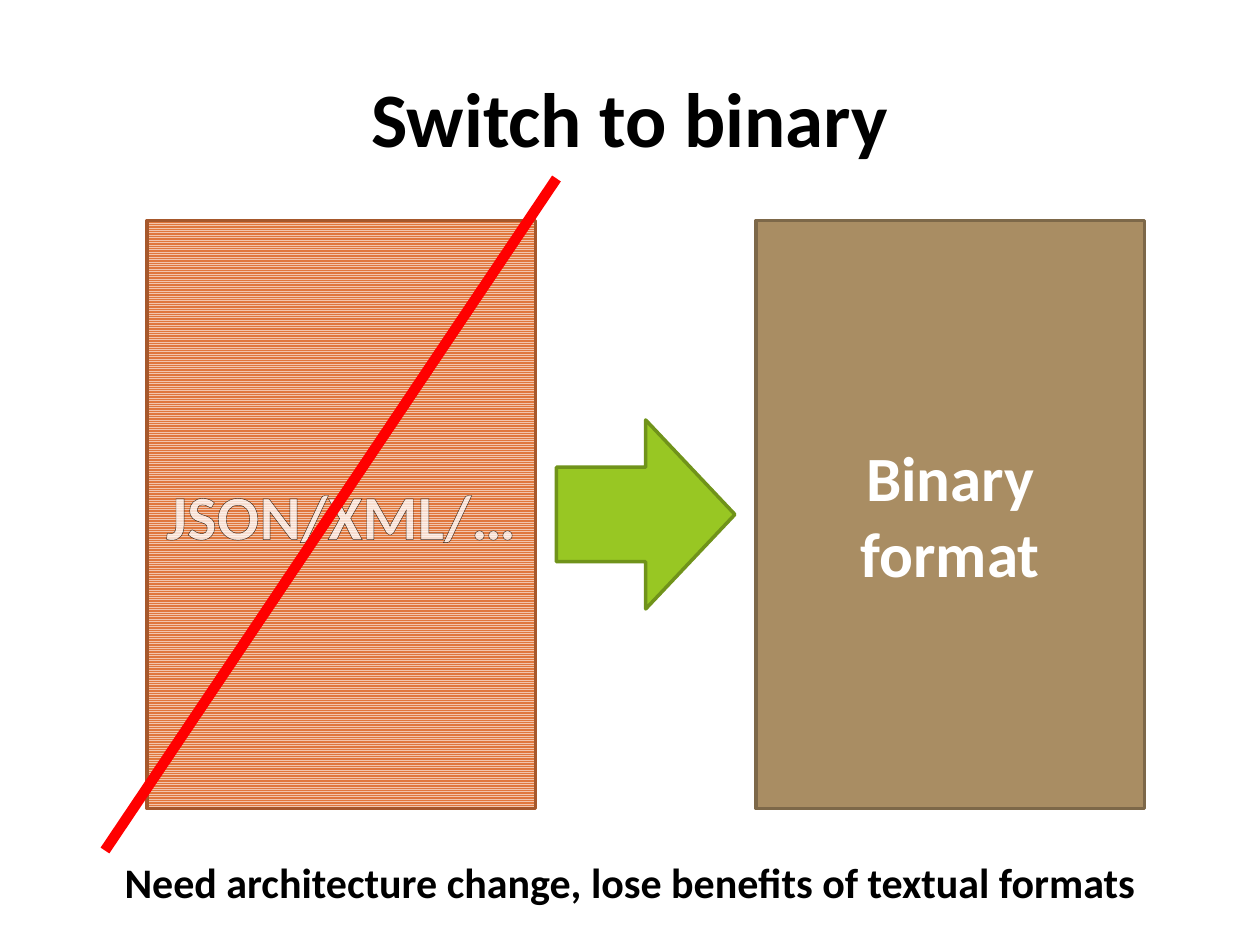
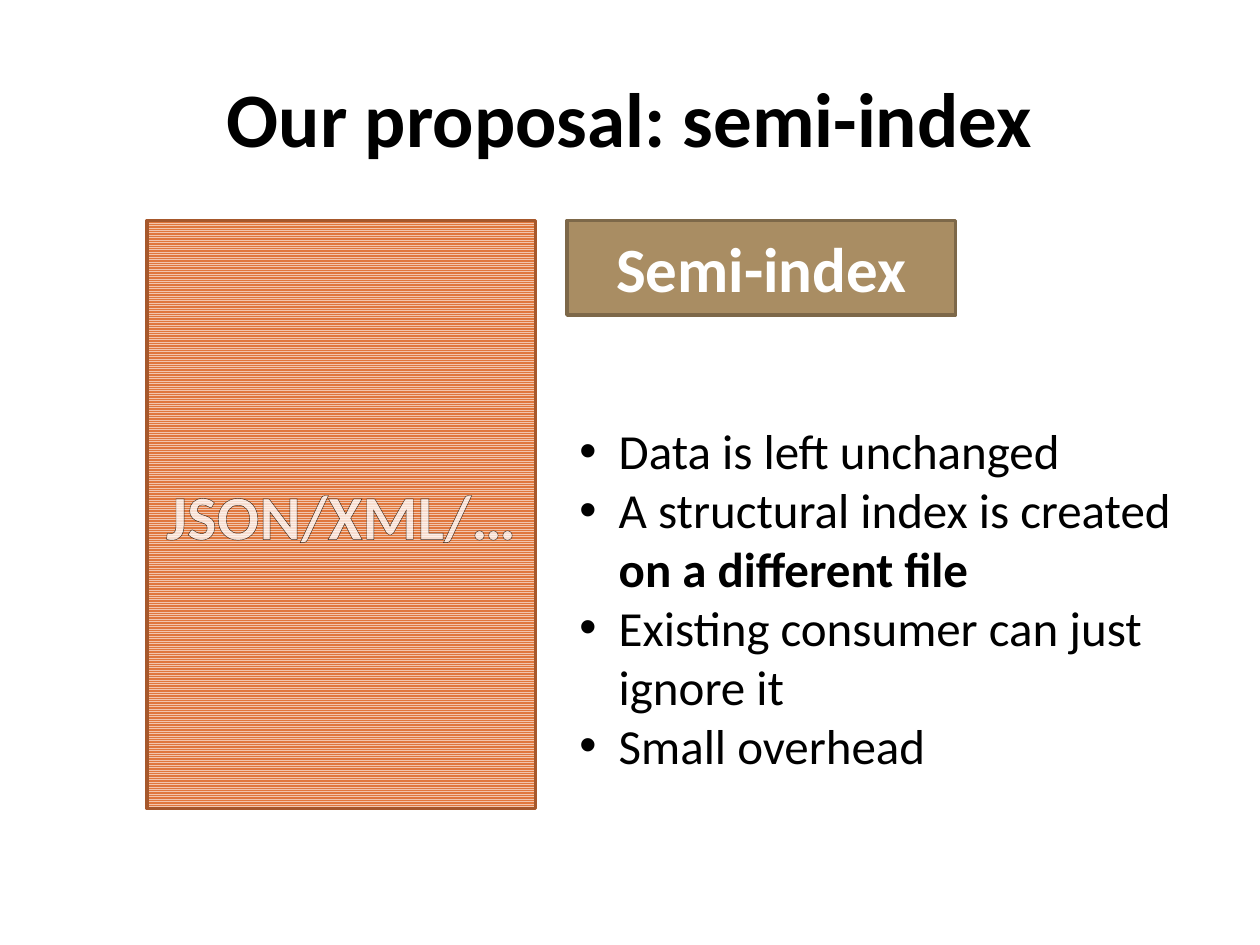
from lxml import etree
from pptx import Presentation
from pptx.dml.color import RGBColor
from pptx.enum.dml import MSO_PATTERN
from pptx.enum.shapes import MSO_CONNECTOR, MSO_SHAPE
from pptx.enum.text import MSO_ANCHOR, PP_ALIGN
from pptx.oxml import parse_xml
from pptx.oxml.ns import nsdecls, qn
from pptx.util import Pt

# Shared look
FONT = "Calibri"
BLACK = RGBColor(0x00, 0x00, 0x00)
WHITE = RGBColor(0xFF, 0xFF, 0xFF)
RED = RGBColor(0xFF, 0x00, 0x00)
ORANGE = RGBColor(0xE0, 0x77, 0x3C)
PALE_ORANGE = RGBColor(0xF2, 0xC5, 0xAC)
DARK_ORANGE = RGBColor(0xA6, 0x58, 0x2C)
TAN = RGBColor(0xA9, 0x8D, 0x63)
DARK_TAN = RGBColor(0x7D, 0x68, 0x49)
GREEN = RGBColor(0x98, 0xC7, 0x23)
DARK_GREEN = RGBColor(0x70, 0x93, 0x1A)

PANEL_TOP, PANEL_WIDTH, PANEL_HEIGHT = 126, 222, 336
BULLET_INDENT = 22.5
GLYPH_OUTLINE = (
    f'<a:ln {nsdecls("a")} w="9525"><a:solidFill><a:srgbClr val="000000">'
    '<a:alpha val="75000"/></a:srgbClr></a:solidFill></a:ln>'
)


def write(shape, text, size=36, color=WHITE, bold=True, align=PP_ALIGN.CENTER,
          anchor=MSO_ANCHOR.MIDDLE, bullet=None, outlined=False):
    """New line: paragraph; vertical tab: line break; ** switches bold."""
    frame = shape.text_frame
    frame.word_wrap = True
    frame.vertical_anchor = anchor
    for number, line in enumerate(text.split("\n")):
        paragraph = frame.add_paragraph() if number else frame.paragraphs[0]
        paragraph.alignment = align
        if bullet:
            props = paragraph._p.get_or_add_pPr()
            props.set("marL", str(Pt(BULLET_INDENT)))
            props.set("indent", str(-Pt(BULLET_INDENT)))
            etree.SubElement(props, qn("a:buFont")).set("typeface", "Arial")
            etree.SubElement(props, qn("a:buChar")).set("char", bullet)
        for row_number, row in enumerate(line.split("\v")):
            if row_number:
                paragraph.add_line_break()
            for part_number, part in enumerate(row.split("**")):
                if not part:
                    continue
                run = paragraph.add_run()
                run.text = part
                run.font.name = FONT
                run.font.size = Pt(size)
                run.font.bold = bold != (part_number % 2 == 1)
                run.font.color.rgb = color
                if outlined:
                    run.font._element.insert(0, parse_xml(GLYPH_OUTLINE))


def add_block(slide, kind, left, top, width, height, fill, line):
    block = slide.shapes.add_shape(kind, Pt(left), Pt(top), Pt(width), Pt(height))
    block.shadow.inherit = False
    block.fill.solid()
    block.fill.fore_color.rgb = fill
    block.line.color.rgb = line
    block.line.width = Pt(2)
    return block


deck = Presentation()
deck.slide_width, deck.slide_height = Pt(720), Pt(540)

# Both slides: text-format panel and title
slides = []
for heading in ("Switch to binary", "Our proposal: semi-index"):
    slide = deck.slides.add_slide(deck.slide_layouts[6])
    textual = add_block(slide, MSO_SHAPE.RECTANGLE, 84, PANEL_TOP,
                        PANEL_WIDTH, PANEL_HEIGHT, ORANGE, DARK_ORANGE)
    textual.fill.patterned()
    textual.fill.pattern = MSO_PATTERN.LIGHT_HORIZONTAL
    textual.fill.fore_color.rgb = PALE_ORANGE
    textual.fill.back_color.rgb = ORANGE
    write(textual, "JSON/XML/…", outlined=True)
    title = slide.shapes.add_textbox(Pt(36), Pt(21.6), Pt(648), Pt(90))
    write(title, heading, size=44, color=BLACK)
    slides.append(slide)
switch, proposal = slides

# Slide 1: the text format is replaced by a binary one
binary = add_block(switch, MSO_SHAPE.RECTANGLE, 432, PANEL_TOP,
                   PANEL_WIDTH, PANEL_HEIGHT, TAN, DARK_TAN)
write(binary, "Binary\vformat")
add_block(switch, MSO_SHAPE.RIGHT_ARROW, 318, 240, 102, 108, GREEN, DARK_GREEN)

strike = switch.shapes.add_connector(MSO_CONNECTOR.STRAIGHT,
                                     Pt(60), Pt(486), Pt(318), Pt(102))
strike.line.color.rgb = RED
strike.line.width = Pt(6)
etree.SubElement(strike._element.spPr, qn("a:effectLst"))

drawback = switch.shapes.add_textbox(Pt(24), Pt(486), Pt(672), Pt(36))
write(drawback, "Need architecture change, lose benefits of textual formats",
      size=24, color=BLACK, anchor=MSO_ANCHOR.TOP)

# Slide 2: the semi-index sits beside the data
semi_index = add_block(proposal, MSO_SHAPE.RECTANGLE, 324, PANEL_TOP,
                       PANEL_WIDTH, 54, TAN, DARK_TAN)
write(semi_index, "Semi-index")

benefits = proposal.shapes.add_textbox(Pt(324), Pt(237), Pt(354), Pt(211))
write(benefits,
      "Data is left unchanged\n"
      "A structural index is created **on a different file**\n"
      "Existing consumer can just ignore it\n"
      "Small overhead",
      size=28, color=BLACK, bold=False, align=PP_ALIGN.LEFT,
      anchor=MSO_ANCHOR.TOP, bullet="•")

deck.save("out.pptx")
